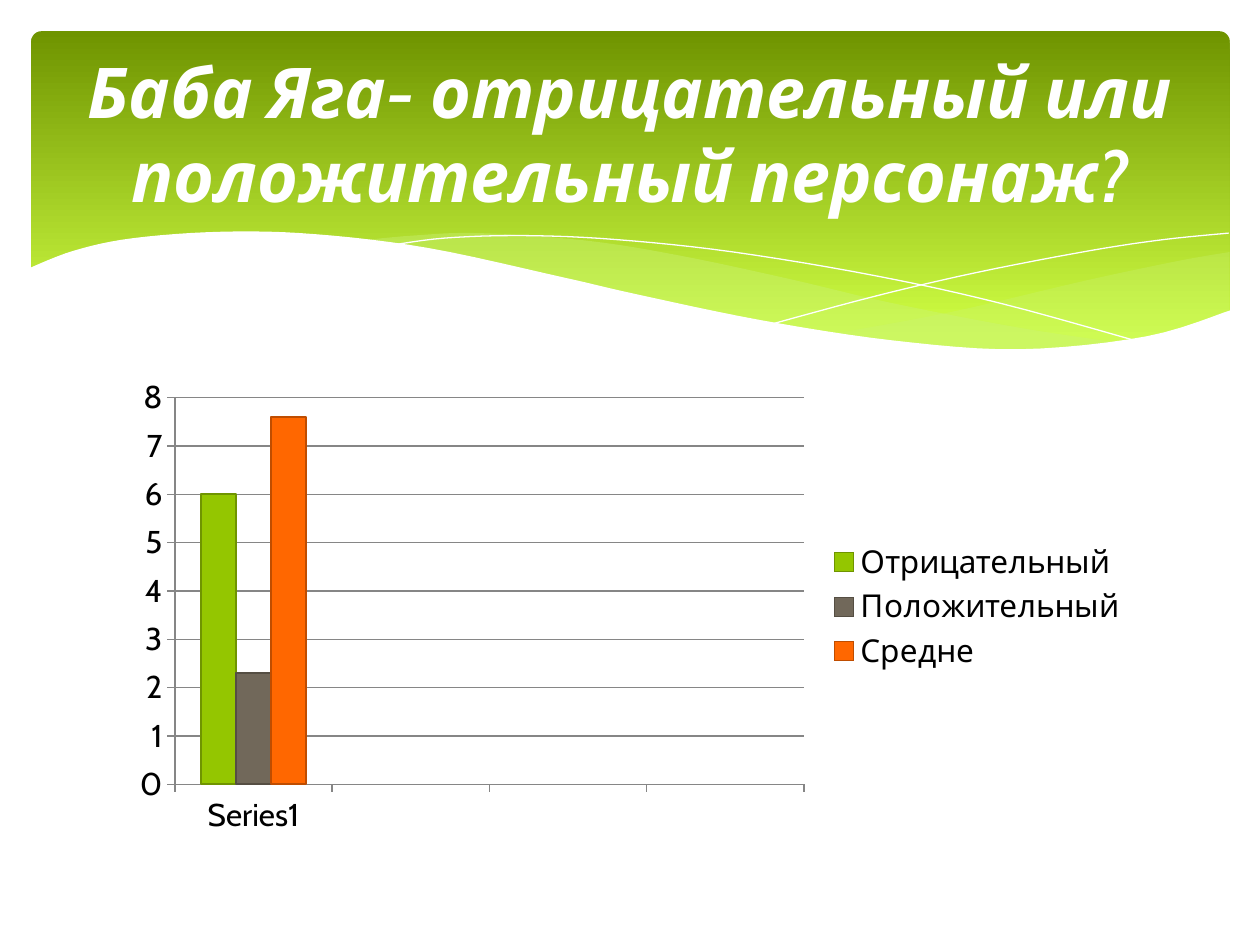
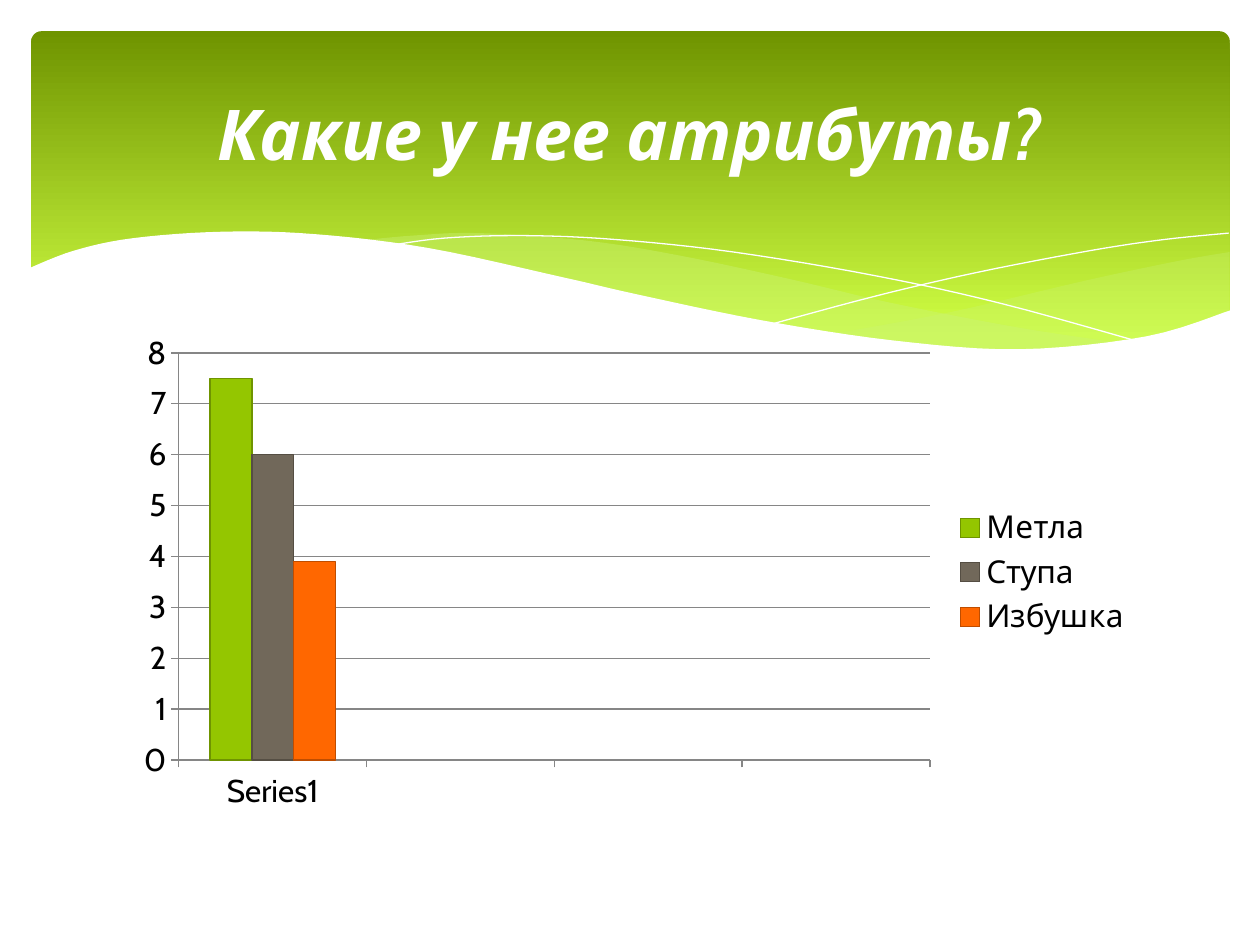
from dataclasses import dataclass
from typing import Any

from lxml import etree
from pptx import Presentation
from pptx import util as u
from pptx.chart import data as chart_data
from pptx.dml.color import RGBColor
from pptx.enum import chart as charts, shapes, text
from pptx.oxml import ns

WHITE = RGBColor(0xFF, 0xFF, 0xFF)
BLACK = RGBColor(0x00, 0x00, 0x00)
GRID_GREY = RGBColor(0x86, 0x86, 0x86)
DARK_GREEN = RGBColor(0x6F, 0x94, 0x00)
LIME = RGBColor(0xD0, 0xFF, 0x44)
PALE_LIME = RGBColor(0xCA, 0xF2, 0x78)
BAR_COLORS = (
    (RGBColor(0x94, 0xC6, 0x00), DARK_GREEN),
    (RGBColor(0x71, 0x68, 0x5A), RGBColor(0x55, 0x4E, 0x43)),
    (RGBColor(0xFF, 0x67, 0x00), RGBColor(0xBF, 0x4D, 0x00)),
)

FONT = "Cabin"
TITLE_FORMAT = {"name": FONT, "size": u.Pt(40), "bold": True, "italic": True}
CHART_FORMAT = {"name": FONT, "size": u.Pt(18)}
CATEGORIES = ("Series1", "", "", "")
CURVE_STEPS = 6

Point = tuple[float, float]
Points = tuple[Point, ...]


@dataclass(frozen=True)
class Wave:
    curves: tuple[Points, ...]
    corners: Points = ()
    fill: RGBColor | None = None
    opacity: int = 100


@dataclass(frozen=True)
class Survey:
    title: str
    left: float
    top: float
    height: float
    answers: dict[str, float]


WAVES = (
    Wave(
        curves=(
            ((24.79, 5.08), (23.75, 5.26), (21.87, 5.66), (19.13, 6.3), (16.79, 6.73)),
            ((16.79, 6.73), (18.26, 6.91), (19.84, 7.04), (21.69, 7.01),
             (23.19, 6.78), (24.79, 6.27)),
        ),
        fill=PALE_LIME,
        opacity=29,
    ),
    Wave(
        curves=(
            ((22.68, 6.93), (20.5, 6.6), (17.93, 6.1), (15.98, 5.64), (13.74, 5.16),
             (11.81, 4.85), (9.65, 4.7), (8.33, 4.75), (7.26, 4.85)),
            ((7.26, 4.85), (9.19, 5.16), (11.4, 5.64), (14.38, 6.3), (16.89, 6.76),
             (19, 7.01), (20.78, 7.06), (22.68, 6.93)),
        ),
        fill=PALE_LIME,
        opacity=40,
    ),
    Wave(
        curves=(
            ((7.85, 4.95), (8.97, 4.8), (10.57, 4.75), (12.42, 4.83),
             (14.78, 5.08), (17.65, 5.56), (20.19, 6.12), (23.04, 6.91)),
        ),
    ),
    Wave(
        curves=(
            ((15.57, 6.53), (17.65, 5.97), (19.71, 5.49), (22, 5.05),
             (23.47, 4.83), (24.77, 4.7)),
        ),
    ),
    Wave(
        curves=(
            ((24.82, 6.25), (23.11, 6.78), (20.55, 7.04), (17.98, 6.86), (15.32, 6.45),
             (12.78, 5.92), (11.35, 5.59), (8.64, 5), (6.35, 4.72), (4.5, 4.67),
             (2.69, 4.8), (1.5, 5.05), (0.58, 5.41)),
        ),
        corners=((0.58, 8.36), (24.82, 8.36)),
        fill=WHITE,
    ),
)

SURVEYS = (
    Survey(
        "Баба Яга- отрицательный или положительный персонаж?",
        2.41, 7.44, 9.58,
        {"Отрицательный": 6, "Положительный": 2.3, "Средне": 7.6},
    ),
    Survey(
        "Какие у нее атрибуты?",
        2.49, 6.53, 10.01,
        {"Метла": 7.5, "Ступа": 6, "Избушка": 3.9},
    ),
)


def apply_format(target: Any, values: dict[str, Any]) -> None:
    for name, value in values.items():
        setattr(target, name, value)


def smooth_curve(knots: Points) -> list[Point]:
    padded = (knots[0], *knots, knots[-1])
    points = [knots[0]]
    for before, start, end, after in zip(padded, padded[1:], padded[2:], padded[3:]):
        for step in range(1, CURVE_STEPS + 1):
            t = step / CURVE_STEPS
            x, y = (
                b + ((c - a) * t + (2 * a - 5 * b + 4 * c - d) * t**2
                     + (3 * b - a - 3 * c + d) * t**3) / 2
                for a, b, c, d in zip(before, start, end, after)
            )
            points.append((x, y))
    return points


def draw_wave(page: Any, wave: Wave) -> None:
    outline = [point for curve in wave.curves for point in smooth_curve(curve)]
    outline.extend(wave.corners)
    points = [(u.Cm(x), u.Cm(y)) for x, y in outline]
    builder = page.shapes.build_freeform(*points[0])
    builder.add_line_segments(points[1:], close=wave.fill is not None)
    shape = builder.convert_to_shape()
    shape.shadow.inherit = False
    if wave.fill is None:
        shape.fill.background()
        shape.line.color.rgb = WHITE
        shape.line.width = u.Cm(0)
        return
    shape.fill.solid()
    shape.fill.fore_color.rgb = wave.fill
    shape.line.fill.background()
    if wave.opacity < 100:
        color = shape.element.xpath("./p:spPr/a:solidFill/a:srgbClr")[0]
        etree.SubElement(color, ns.qn("a:alpha"), val=str(wave.opacity * 1000))


def draw_banner(page: Any) -> None:
    banner = page.shapes.add_shape(
        shapes.MSO_SHAPE.ROUNDED_RECTANGLE,
        u.Cm(0.63), u.Cm(0.63), u.Cm(24.16), u.Cm(6.86),
    )
    banner.adjustments[0] = 0.03
    banner.shadow.inherit = False
    banner.line.fill.background()
    banner.fill.gradient()
    banner.fill.gradient_angle = 270
    for stop, color, position in zip(banner.fill.gradient_stops, (DARK_GREEN, LIME), (0, 0.9)):
        stop.color.rgb = color
        stop.position = position
    for wave in WAVES:
        draw_wave(page, wave)


def draw_title(page: Any, title: str) -> None:
    box = page.shapes.add_textbox(u.Cm(1.27), u.Cm(0.94), u.Cm(22.86), u.Cm(3.48))
    frame = box.text_frame
    apply_format(frame, {"word_wrap": True, "vertical_anchor": text.MSO_ANCHOR.MIDDLE})
    para = frame.paragraphs[0]
    para.alignment = text.PP_ALIGN.CENTER
    span = para.add_run()
    span.text = title
    apply_format(span.font, TITLE_FORMAT)
    span.font.color.rgb = WHITE


def draw_chart(page: Any, survey: Survey) -> None:
    data = chart_data.CategoryChartData()
    data.categories = CATEGORIES
    for answer, value in survey.answers.items():
        data.add_series(answer, (value, None, None, None))
    chart = page.shapes.add_chart(
        charts.XL_CHART_TYPE.COLUMN_CLUSTERED,
        u.Cm(survey.left), u.Cm(survey.top), u.Cm(20.57), u.Cm(survey.height), data,
    ).chart
    apply_format(chart, {"has_title": False, "has_legend": True})
    apply_format(chart.font, CHART_FORMAT)
    chart.font.color.rgb = BLACK
    apply_format(chart.legend, {
        "position": charts.XL_LEGEND_POSITION.RIGHT,
        "include_in_layout": False,
    })
    apply_format(chart.value_axis, {
        "minimum_scale": 0,
        "maximum_scale": 8,
        "major_unit": 1,
        "has_major_gridlines": True,
    })
    for axis in (chart.category_axis, chart.value_axis):
        axis.major_tick_mark = charts.XL_TICK_MARK.OUTSIDE
        axis.format.line.color.rgb = GRID_GREY
    chart.value_axis.major_gridlines.format.line.color.rgb = GRID_GREY
    plot = chart.plots[0]
    apply_format(plot, {"gap_width": 150, "overlap": 0, "vary_by_categories": False})
    for series, (fill, edge) in zip(plot.series, BAR_COLORS):
        series.format.fill.solid()
        series.format.fill.fore_color.rgb = fill
        series.format.line.color.rgb = edge
        series.format.line.width = u.Cm(0.03)


def main() -> None:
    deck = Presentation()
    apply_format(deck, {"slide_width": u.Cm(25.4), "slide_height": u.Cm(19.05)})
    for survey in SURVEYS:
        page = deck.slides.add_slide(deck.slide_layouts[6])
        draw_banner(page)
        draw_chart(page, survey)
        draw_title(page, survey.title)
    deck.save("out.pptx")


if __name__ == "__main__":
    main()
